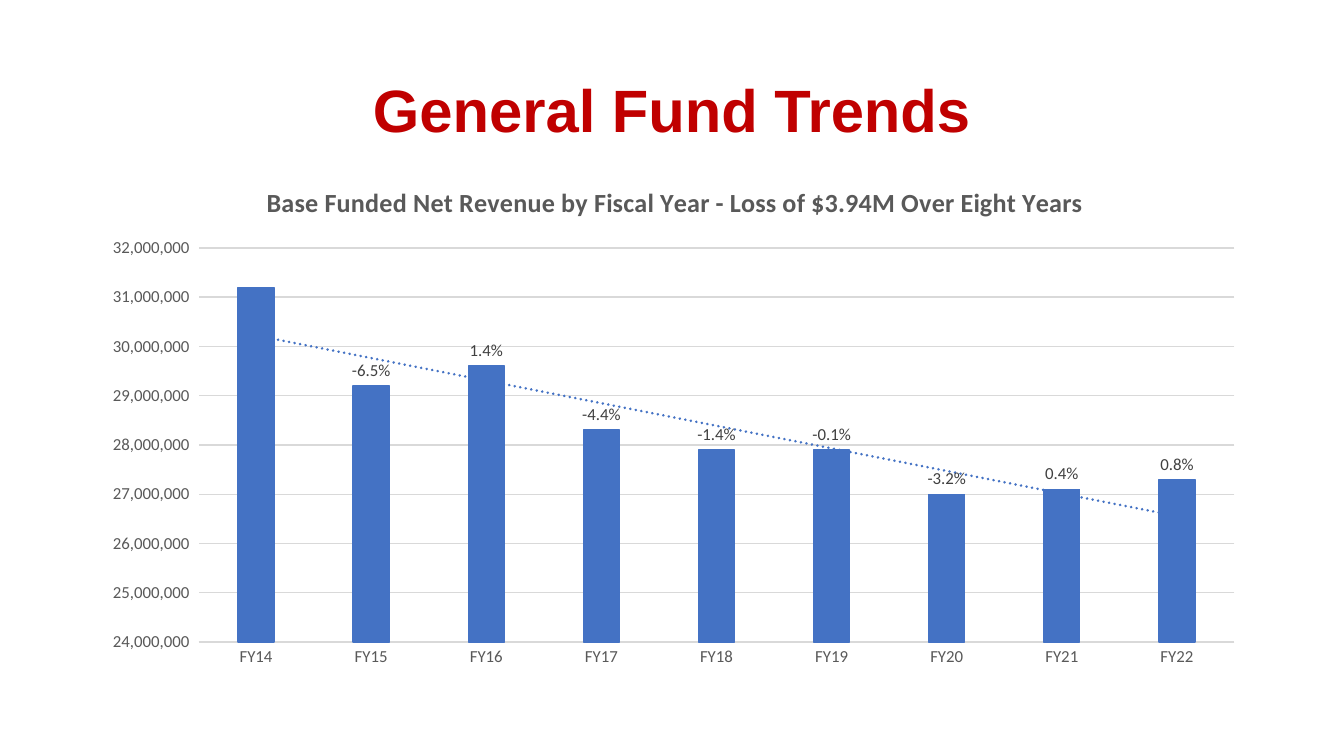
from dataclasses import dataclass

from lxml import etree
from pptx import Presentation
from pptx.chart.data import CategoryChartData
from pptx.dml.color import RGBColor
from pptx.enum.chart import XL_CHART_TYPE, XL_LABEL_POSITION, XL_TICK_MARK
from pptx.enum.text import MSO_ANCHOR, PP_ALIGN
from pptx.oxml import parse_xml
from pptx.oxml.ns import nsdecls, qn
from pptx.util import Inches, Pt

COLUMNS = XL_CHART_TYPE.COLUMN_CLUSTERED
OUTSIDE_END = XL_LABEL_POSITION.OUTSIDE_END
NO_TICK = XL_TICK_MARK.NONE
MIDDLE = MSO_ANCHOR.MIDDLE
CENTER = PP_ALIGN.CENTER


@dataclass(frozen=True)
class Theme:
    heading: str = "C00000"
    bar: str = "4472C4"
    axis_text: str = "595959"
    label_text: str = "404040"
    grid: str = "D9D9D9"
    heading_font: str = "Arial"
    chart_font: str = "Calibri"
    heading_size: int = 32
    chart_title_size: int = 14
    chart_size: int = 9


theme = Theme()


def style_font(font, name, size, color, bold=False):
    font.name = name
    font.size = Pt(size)
    font.color.rgb = RGBColor.from_string(color)
    font.bold = bold


def manual_layout(parent, **settings):
    for old_layout in parent.findall(qn("c:layout")):
        parent.remove(old_layout)
    layout = etree.Element(qn("c:layout"))
    manual = etree.SubElement(layout, qn("c:manualLayout"))
    for key, value in settings.items():
        etree.SubElement(manual, qn(f"c:{key}")).set("val", str(value))
    return layout


presentation = Presentation()
presentation.slide_width = Inches(10)
presentation.slide_height = Inches(10 * 9 / 16)
slide = presentation.slides.add_slide(presentation.slide_layouts[5])

title = slide.shapes.title
title.left, title.top = Inches(0.69), Inches(0.3)
title.width, title.height = Inches(8.62), Inches(1.09)
title.text_frame.text = "General Fund Trends"
title.text_frame.vertical_anchor = MIDDLE
paragraph = title.text_frame.paragraphs[0]
paragraph.alignment = CENTER
paragraph.line_spacing = 0.9
style_font(paragraph.runs[0].font, theme.heading_font, theme.heading_size, theme.heading, True)

revenue_millions = [31.2, 29.2, 29.6, 28.3, 27.9, 27.9, 27.0, 27.1, 27.3]
changes = ["-6.5%", "1.4%", "-4.4%", "-1.4%", "-0.1%", "-3.2%", "0.4%", "0.8%"]

chart_data = CategoryChartData()
chart_data.categories = [f"FY{year}" for year in range(14, 23)]
chart_data.add_series("Series 1", [round(value * 1_000_000) for value in revenue_millions])
chart = slide.shapes.add_chart(
    COLUMNS, Inches(0.64), Inches(1.22), Inches(8.72), Inches(3.81), chart_data
).chart
chart.has_legend = False
style_font(chart.font, theme.chart_font, theme.chart_size, theme.axis_text)

chart_title = chart.chart_title
chart_title.text_frame.text = "Base Funded Net Revenue by Fiscal Year - Loss of $3.94M Over Eight Years"
chart_title_run = chart_title.text_frame.paragraphs[0].runs[0]
style_font(chart_title_run.font, theme.chart_font, theme.chart_title_size, theme.axis_text, True)
chart_title.include_in_layout = False
title_element = chart_title.text_frame.paragraphs[0]._p.getparent().getparent().getparent()
title_layout = manual_layout(title_element, xMode="edge", yMode="edge", x=0.15, y=0.03)
title_element.find(qn("c:tx")).addnext(title_layout)

plot = chart.plots[0]
plot.gap_width = 219
plot.overlap = -27
plot.vary_by_categories = False
plot_area = plot._element.getparent()
plot_layout = manual_layout(
    plot_area, layoutTarget="inner", xMode="edge", yMode="edge", x=0.096, y=0.164, w=0.884, h=0.77
)
plot_area.insert(0, plot_layout)

category_axis, value_axis = chart.category_axis, chart.value_axis
for axis in (category_axis, value_axis):
    axis.major_tick_mark = NO_TICK
    axis.minor_tick_mark = NO_TICK
    style_font(axis.tick_labels.font, theme.chart_font, theme.chart_size, theme.axis_text)
value_axis.minimum_scale = 24_000_000
value_axis.maximum_scale = 32_000_000
value_axis.major_unit = 1_000_000
value_axis.tick_labels.number_format = '_(* #,##0_);_(* \\(#,##0\\);_(* "-"??_);_(@_)'
value_axis.tick_labels.number_format_is_linked = False
value_axis.format.line.fill.background()
value_axis.has_major_gridlines = True

series = plot.series[0]
series.format.fill.solid()
series.format.fill.fore_color.rgb = RGBColor.from_string(theme.bar)
for line, color in (
    (category_axis.format.line, theme.grid),
    (value_axis.major_gridlines.format.line, theme.grid),
    (series.format.line, theme.bar),
):
    line.color.rgb = RGBColor.from_string(color)
    line.width = Pt(0.75)

series.data_labels.show_value = False
for index, change in enumerate(changes, start=1):
    label = series.points[index].data_label
    label.text_frame.text = change
    label.position = OUTSIDE_END
    run = label.text_frame.paragraphs[0].runs[0]
    style_font(run.font, theme.chart_font, theme.chart_size, theme.label_text)

trendline = parse_xml(
    f'<c:trendline {nsdecls("c", "a")}><c:spPr><a:ln w="{Pt(1.5)}" cap="rnd">'
    f'<a:solidFill><a:srgbClr val="{theme.bar}"/></a:solidFill><a:prstDash val="sysDot"/>'
    '</a:ln></c:spPr><c:trendlineType val="linear"/><c:dispRSqr val="0"/>'
    '<c:dispEq val="0"/></c:trendline>'
)
series._element.find(qn("c:cat")).addprevious(trendline)

presentation.save("out.pptx")
